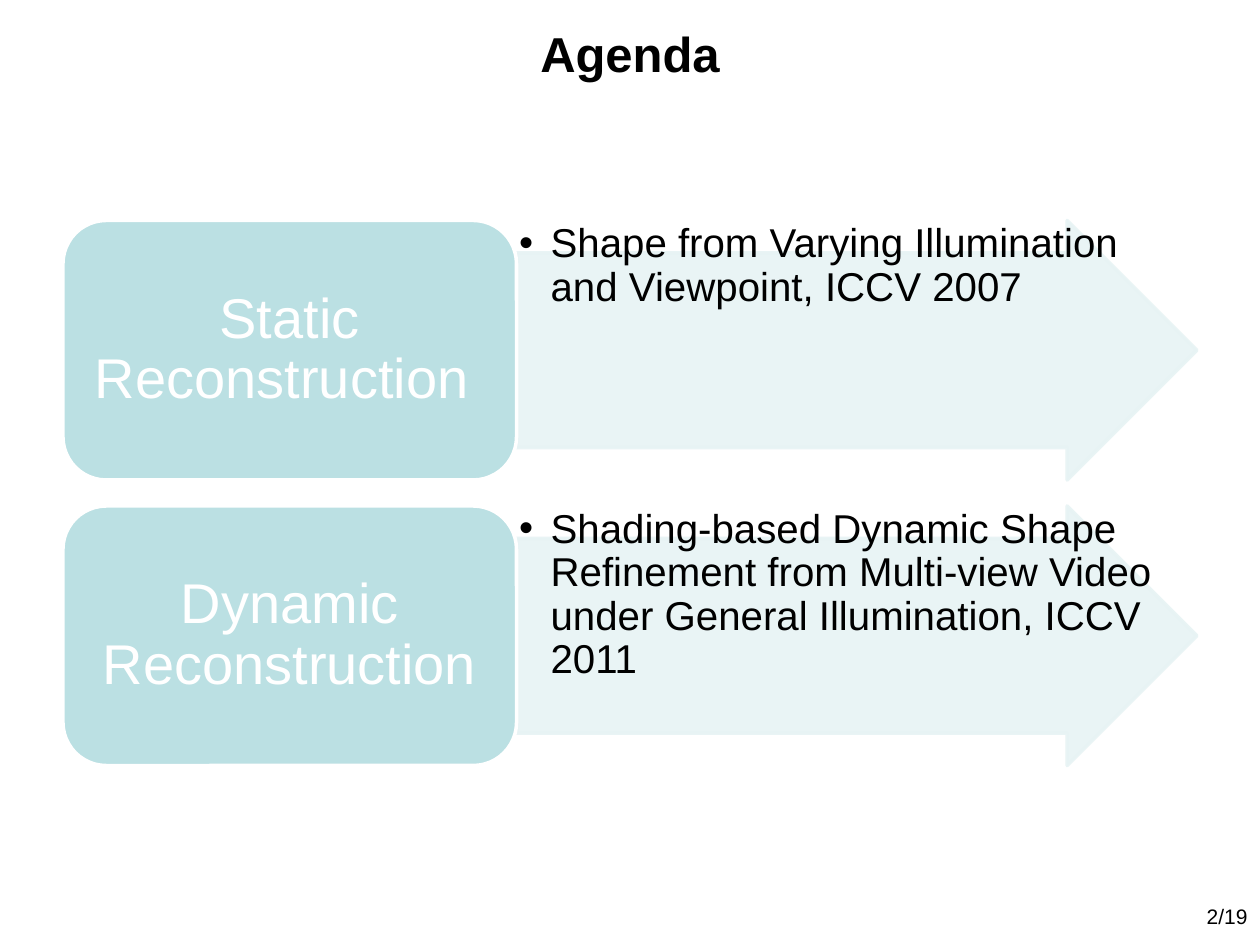
from lxml import etree
from pptx import Presentation, util as u
from pptx.dml.color import RGBColor
from pptx.enum import shapes, text
from pptx.oxml import ns

BLACK = RGBColor(0x00, 0x00, 0x00)
WHITE = RGBColor(0xFF, 0xFF, 0xFF)
TEAL = RGBColor(0xBB, 0xE0, 0xE3)
PALE_TEAL = RGBColor(0xE7, 0xF3, 0xF4)

WIDTH, HEIGHT = u.Inches(10), u.Inches(7.5)
LEFT, TOP = 0.05 * WIDTH, u.Inches(1.75)
ROW_WIDTH, ROW_HEIGHT = 0.9 * WIDTH, u.Inches(2.06)
ROW_PITCH = 1.1 * ROW_HEIGHT
TOPIC_SHARE = 0.4

TOPICS = [
    ("Static Reconstruction ",
     "Shape from Varying Illumination and Viewpoint, ICCV 2007"),
    ("Dynamic Reconstruction",
     "Shading-based Dynamic Shape Refinement from Multi-view Video "
     "under General Illumination, ICCV 2011"),
]


def write(shape, wording, size, color, align, anchor, insets, bold=None):
    """Set one wrapped paragraph in the shape and return it."""
    frame = shape.text_frame
    frame.word_wrap = True
    frame.vertical_anchor = anchor
    frame.margin_left = frame.margin_right = u.Inches(insets[0])
    frame.margin_top = frame.margin_bottom = u.Inches(insets[1])
    paragraph = frame.paragraphs[0]
    paragraph.alignment = align
    run = paragraph.add_run()
    run.text = wording
    run.font.name = "Arial"
    run.font.size = u.Pt(size)
    run.font.bold = bold
    run.font.color.rgb = color
    return paragraph


def add_block(slide, preset, box, fill, line):
    """Add a flat preset shape with a two-point outline."""
    block = slide.shapes.add_shape(preset, *map(int, box))
    block.shadow.inherit = False
    block.fill.solid()
    block.fill.fore_color.rgb = fill
    block.line.color.rgb = line
    block.line.width = u.Pt(2)
    return block


def add_bullet(paragraph):
    """Give the paragraph a round bullet with a hanging indent."""
    props = paragraph._p.get_or_add_pPr()
    props.set("marL", str(u.Inches(0.25)))
    props.set("indent", str(-u.Inches(0.25)))
    etree.SubElement(props, ns.qn("a:buFont"), typeface="Arial")
    etree.SubElement(props, ns.qn("a:buChar"), char="•")


def add_caption(slide, box, wording, size, align, anchor, bold=None):
    """Add a black text box for the title or the page number."""
    caption = slide.shapes.add_textbox(*map(int, box))
    write(caption, wording, size, BLACK, align, anchor, (0.1, 0.05), bold)


def add_topic_row(slide, box, topic, paper):
    """Place a topic block and the arrow with its paper inside the box."""
    left, top, width, height = box
    topic_width = TOPIC_SHARE * width
    paper_box = left + topic_width, top, width - topic_width, height

    arrow = add_block(slide, shapes.MSO_SHAPE.RIGHT_ARROW, paper_box,
                      PALE_TEAL, PALE_TEAL)
    arrow.adjustments[0], arrow.adjustments[1] = 0.75, 0.5
    for color in arrow._element.spPr.iter(ns.qn("a:srgbClr")):
        etree.SubElement(color, ns.qn("a:alpha"), val="90000")

    paper_text = slide.shapes.add_textbox(*map(int, paper_box))
    paragraph = write(paper_text, paper, 23, BLACK, text.PP_ALIGN.LEFT,
                      text.MSO_ANCHOR.TOP, (0.02, 0.02))
    paragraph.line_spacing = 0.9
    add_bullet(paragraph)

    topic_block = add_block(slide, shapes.MSO_SHAPE.ROUNDED_RECTANGLE,
                            (left, top, topic_width, height), TEAL, WHITE)
    paragraph = write(topic_block, topic, 32, WHITE, text.PP_ALIGN.CENTER,
                      text.MSO_ANCHOR.MIDDLE, (0.03, 0))
    paragraph.line_spacing = 0.9


def main():
    """Build the agenda slide and save it."""
    deck = Presentation()
    deck.slide_width, deck.slide_height = WIDTH, HEIGHT
    slide = deck.slides.add_slide(deck.slide_layouts[6])
    add_caption(slide, (LEFT, 0, ROW_WIDTH, 0.112 * HEIGHT), "Agenda", 28,
                text.PP_ALIGN.CENTER, text.MSO_ANCHOR.MIDDLE, True)
    for row, (topic, paper) in enumerate(TOPICS):
        box = LEFT, TOP + row * ROW_PITCH, ROW_WIDTH, ROW_HEIGHT
        add_topic_row(slide, box, topic, paper)
    add_caption(slide, (0.894 * WIDTH, 0.95 * HEIGHT, 0.106 * WIDTH, 0.048 * HEIGHT),
                "2/19", 12, text.PP_ALIGN.RIGHT, text.MSO_ANCHOR.TOP)
    deck.save("out.pptx")


if __name__ == "__main__":
    main()
